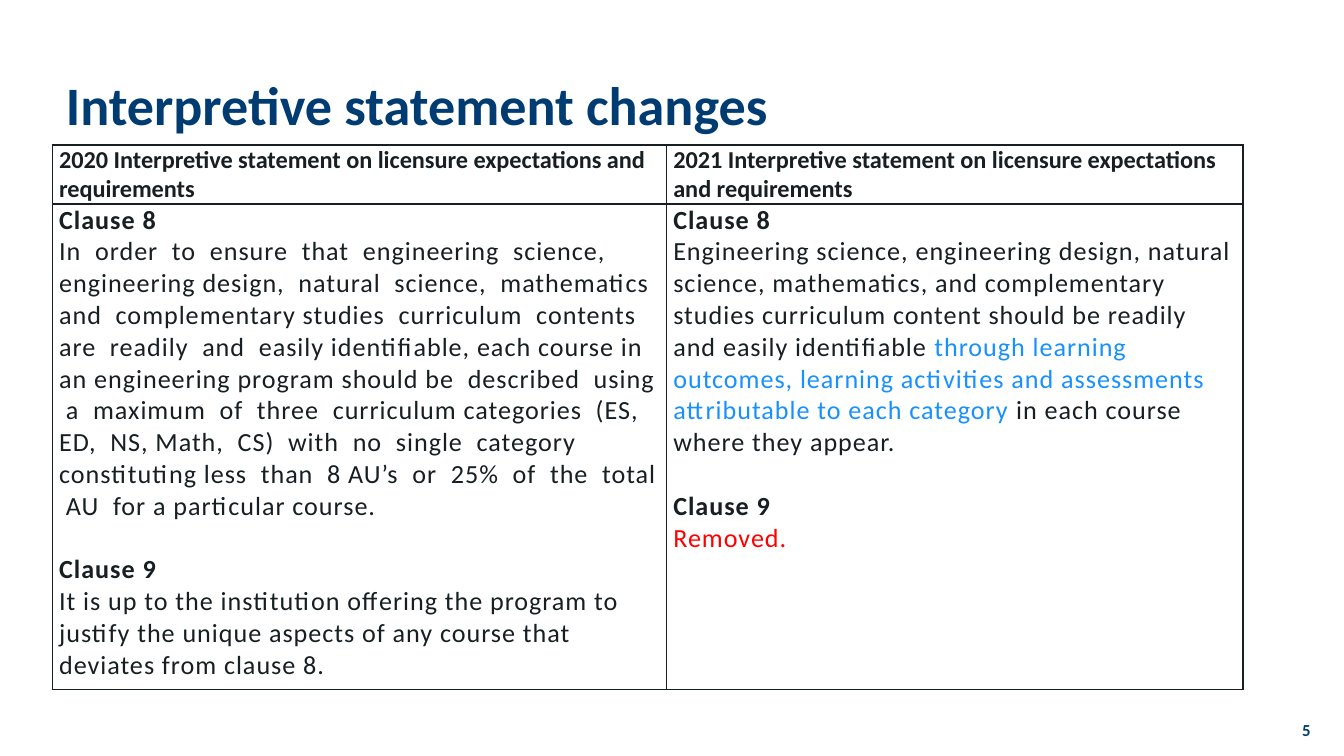
"""Builds a slide comparing the 2020 and 2021 interpretive statements."""
from lxml import etree
from pptx import Presentation
from pptx import util as u
from pptx.dml.color import RGBColor
from pptx.enum import text
from pptx.oxml import ns

NAVY, INK, BLUE, RED = "003C71", "171F23", "1891FF", "FF0000"
TITLE = "Interpretive statement changes"
PAGE = "5"
HEADERS = [
    "2020 Interpretive statement on licensure expectations and requirements",
    "2021 Interpretive statement on licensure expectations and requirements",
]
CLAUSES = [
    [
        ("Clause 8", [(
            "In  order  to  ensure  that  engineering  science,  engineering design,  natural  science,  "
            "mathematics  and  complementary studies  curriculum  contents  are  readily  and  easily "
            "identifiable, each course in an engineering program should be  described  using  a  maximum  "
            "of  three  curriculum categories  (ES,  ED,  NS, Math,  CS)  with  no  single  category "
            "constituting less  than  8 AU’s  or  25%  of  the  total  AU  for a particular course.", INK)]),
        ("Clause 9", [(
            "It is up to the institution offering the program to justify the unique aspects of any course "
            "that deviates from clause 8.", INK)]),
    ],
    [
        ("Clause 8", [
            ("Engineering science, engineering design, natural science, mathematics, and complementary "
             "studies curriculum content should be readily and easily identifiable ", INK),
            ("through learning outcomes, learning activities and assessments attributable to each category", BLUE),
            (" in each course where they appear.", INK)]),
        ("Clause 9", [("Removed.", RED)]),
    ],
]
LEFT, TOP = 0.39, 1.08
COLS, ROWS = [4.57, 4.29], [0.44, 3.61]
BODY_SIZE, BLANK_LINE = 14, 17


def rgb(value):
    return RGBColor.from_string(value)


def add_run(p, content, size=BODY_SIZE, color=INK, bold=False, spacing=None):
    r = p.add_run()
    r.text = content
    f = r.font
    f.name, f.size, f.bold = "Calibri", u.Pt(size), bold
    f.color.rgb = rgb(color)
    if spacing:
        r._r.get_or_add_rPr().set("spc", str(int(spacing * 100)))


def style_cell(cell, anchor):
    cell.margin_left = cell.margin_right = u.Inches(0.05)
    cell.margin_top = cell.margin_bottom = 0
    cell.vertical_anchor = anchor
    tc_pr = cell._tc.get_or_add_tcPr()
    for side in ("lnL", "lnR", "lnT", "lnB"):
        line = etree.SubElement(tc_pr, ns.qn(f"a:{side}"), w=str(u.Pt(1)))
        fill = etree.SubElement(line, ns.qn("a:solidFill"))
        etree.SubElement(fill, ns.qn("a:srgbClr"), val=INK)
    cell.fill.background()


def write_clauses(tf, clauses):
    p = tf.paragraphs[0]
    for i, (heading, parts) in enumerate(clauses):
        if i:
            p = tf.add_paragraph()
            p.space_before = u.Pt(BLANK_LINE)
        add_run(p, heading, bold=True, spacing=0.5)
        p = tf.add_paragraph()
        for content, color in parts:
            add_run(p, content, color=color, spacing=0.5)


def add_title(s):
    sp = s.shapes.title
    sp.left, sp.top, sp.width, sp.height = map(u.Inches, (LEFT, 0.26, 8.62, 1.09))
    tf = sp.text_frame
    tf.auto_size, tf.vertical_anchor = text.MSO_AUTO_SIZE.NONE, text.MSO_ANCHOR.MIDDLE
    p = tf.paragraphs[0]
    p.alignment, p.line_spacing = text.PP_ALIGN.LEFT, 0.9
    add_run(p, TITLE, size=29, color=NAVY, bold=True)


def add_page_number(s):
    tf = s.shapes.add_textbox(*map(u.Inches, (9.49, 5.35, 0.36, 0.16))).text_frame
    tf.word_wrap, tf.vertical_anchor = True, text.MSO_ANCHOR.MIDDLE
    tf.margin_top = tf.margin_bottom = 0
    p = tf.paragraphs[0]
    p.alignment = text.PP_ALIGN.RIGHT
    add_run(p, PAGE, size=9, color=NAVY, bold=True)


def add_comparison(s):
    box = map(u.Inches, (LEFT, TOP, sum(COLS), sum(ROWS)))
    table = s.shapes.add_table(len(ROWS), len(COLS), *box).table
    table.first_row = table.horz_banding = False
    for row, height in zip(table.rows, ROWS):
        row.height = u.Inches(height)
    for i, width in enumerate(COLS):
        table.columns[i].width = u.Inches(width)
        header, body = table.cell(0, i), table.cell(1, i)
        style_cell(header, text.MSO_ANCHOR.MIDDLE)
        style_cell(body, text.MSO_ANCHOR.TOP)
        add_run(header.text_frame.paragraphs[0], HEADERS[i], size=13, bold=True)
        write_clauses(body.text_frame, CLAUSES[i])


def main():
    prs = Presentation()
    prs.slide_width = u.Inches(10)
    prs.slide_height = prs.slide_width * 9 // 16
    s = prs.slides.add_slide(prs.slide_layouts[5])
    add_title(s)
    add_page_number(s)
    add_comparison(s)
    prs.save("out.pptx")


if __name__ == "__main__":
    main()
